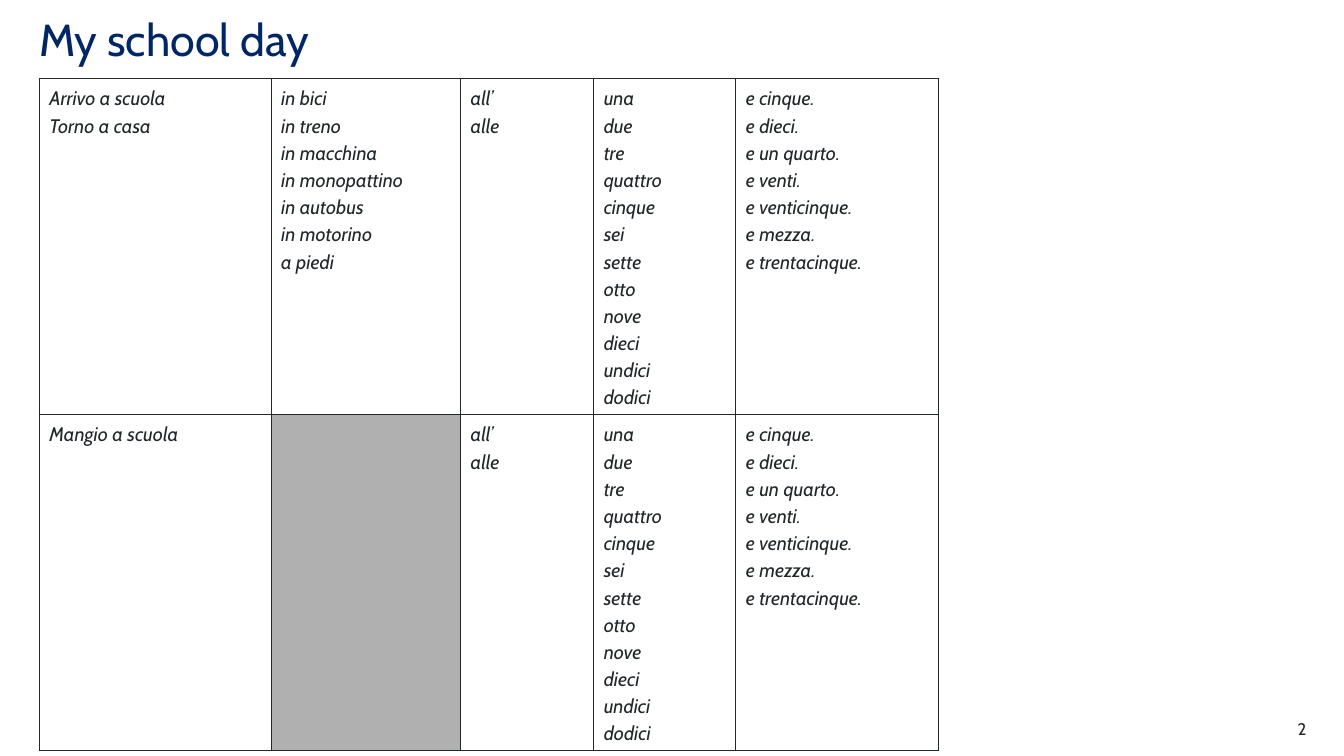
"""Build the "My school day" slide with its Italian sentence-builder table."""
from lxml import etree
from pptx import Presentation
from pptx.dml.color import RGBColor
from pptx.enum.text import MSO_ANCHOR, PP_ALIGN
from pptx.oxml.ns import qn
from pptx.util import Pt

LEFT, RIGHT = PP_ALIGN.LEFT, PP_ALIGN.RIGHT
TOP = MSO_ANCHOR.TOP

TITLE = "My school day"
PAGE_NUMBER = "2"
TRANSPORT = ["in bici", "in treno", "in macchina", "in monopattino",
             "in autobus", "in motorino", "a piedi"]
PREPOSITIONS = ["all’", "alle"]
HOURS = ["una", "due", "tre", "quattro", "cinque", "sei", "sette",
         "otto", "nove", "dieci", "undici", "dodici"]
MINUTES = ["e cinque.", "e dieci.", "e un quarto.", "e venti.",
           "e venticinque.", "e mezza.", "e trentacinque."]
TIME = [PREPOSITIONS, HOURS, MINUTES]
ROWS = [
    [["Arrivo a scuola", "Torno a casa"], TRANSPORT, *TIME],
    [["Mangio a scuola"], [], *TIME],
]

THEME = {
    "font": "Cabin",
    "navy": "002664", "ink": "22272B", "grey": "B0B0B0", "white": "FFFFFF",
    "title_size": 32, "cell_size": 14, "number_size": 12,
    "title_spacing": 0.9, "cell_spacing": 1.14, "border": 1,
}
SLIDE_SIZE = (960, 540)
TITLE_BOX = (28.08, 12.96, 793.44, 79.2)
NUMBER_BOX = (876.24, 513.36, 56.88, 14.4)
TABLE_ORIGIN = (28.08, 56.16)
COLUMN_WIDTHS = [165.6, 135.36, 95.04, 101.52, 144.72]
ROW_HEIGHT = 240


def write_lines(frame, lines, size, color, spacing=1.0, align=LEFT, italic=False):
    for index, line in enumerate(lines):
        para = frame.paragraphs[0] if index == 0 else frame.add_paragraph()
        para.alignment, para.line_spacing = align, spacing
        span = para.add_run()
        span.text = line
        formats = {"name": THEME["font"], "size": Pt(size), "italic": italic, "bold": False}
        for name, value in formats.items():
            setattr(span.font, name, value)
        span.font.color.rgb = RGBColor.from_string(color)


def add_label(page, bounds, text, size, color, **layout):
    frame = page.shapes.add_textbox(*map(Pt, bounds)).text_frame
    formats = {"word_wrap": True, "vertical_anchor": TOP, "margin_left": 0,
               "margin_right": 0, "margin_top": 0, "margin_bottom": 0}
    for name, value in formats.items():
        setattr(frame, name, value)
    write_lines(frame, [text], size, color, **layout)


def draw_borders(cell):
    properties = cell._tc.get_or_add_tcPr()
    for side in ("a:lnL", "a:lnR", "a:lnT", "a:lnB"):
        line = etree.SubElement(properties, qn(side), w=str(Pt(THEME["border"])))
        fill = etree.SubElement(line, qn("a:solidFill"))
        etree.SubElement(fill, qn("a:srgbClr"), val=THEME["ink"])


def add_sentence_table(page):
    size = (sum(COLUMN_WIDTHS), ROW_HEIGHT * len(ROWS))
    table = page.shapes.add_table(
        len(ROWS), len(COLUMN_WIDTHS), *map(Pt, TABLE_ORIGIN + size)).table
    table.first_row = table.horz_banding = False
    for column, width in zip(table.columns, COLUMN_WIDTHS):
        column.width = Pt(width)
    for row, entries in zip(table.rows, ROWS):
        row.height = Pt(ROW_HEIGHT)
        for cell, lines in zip(row.cells, entries):
            draw_borders(cell)
            cell.fill.solid()
            cell.fill.fore_color.rgb = RGBColor.from_string(
                THEME["white" if lines else "grey"])
            write_lines(cell.text_frame, lines, THEME["cell_size"], THEME["ink"],
                        spacing=THEME["cell_spacing"], italic=True)


def main():
    deck = Presentation()
    deck.slide_width, deck.slide_height = map(Pt, SLIDE_SIZE)
    page = deck.slides.add_slide(deck.slide_layouts[6])
    add_label(page, TITLE_BOX, TITLE, THEME["title_size"], THEME["navy"],
              spacing=THEME["title_spacing"])
    add_sentence_table(page)
    add_label(page, NUMBER_BOX, PAGE_NUMBER, THEME["number_size"], THEME["ink"], align=RIGHT)
    deck.save("out.pptx")


if __name__ == "__main__":
    main()
